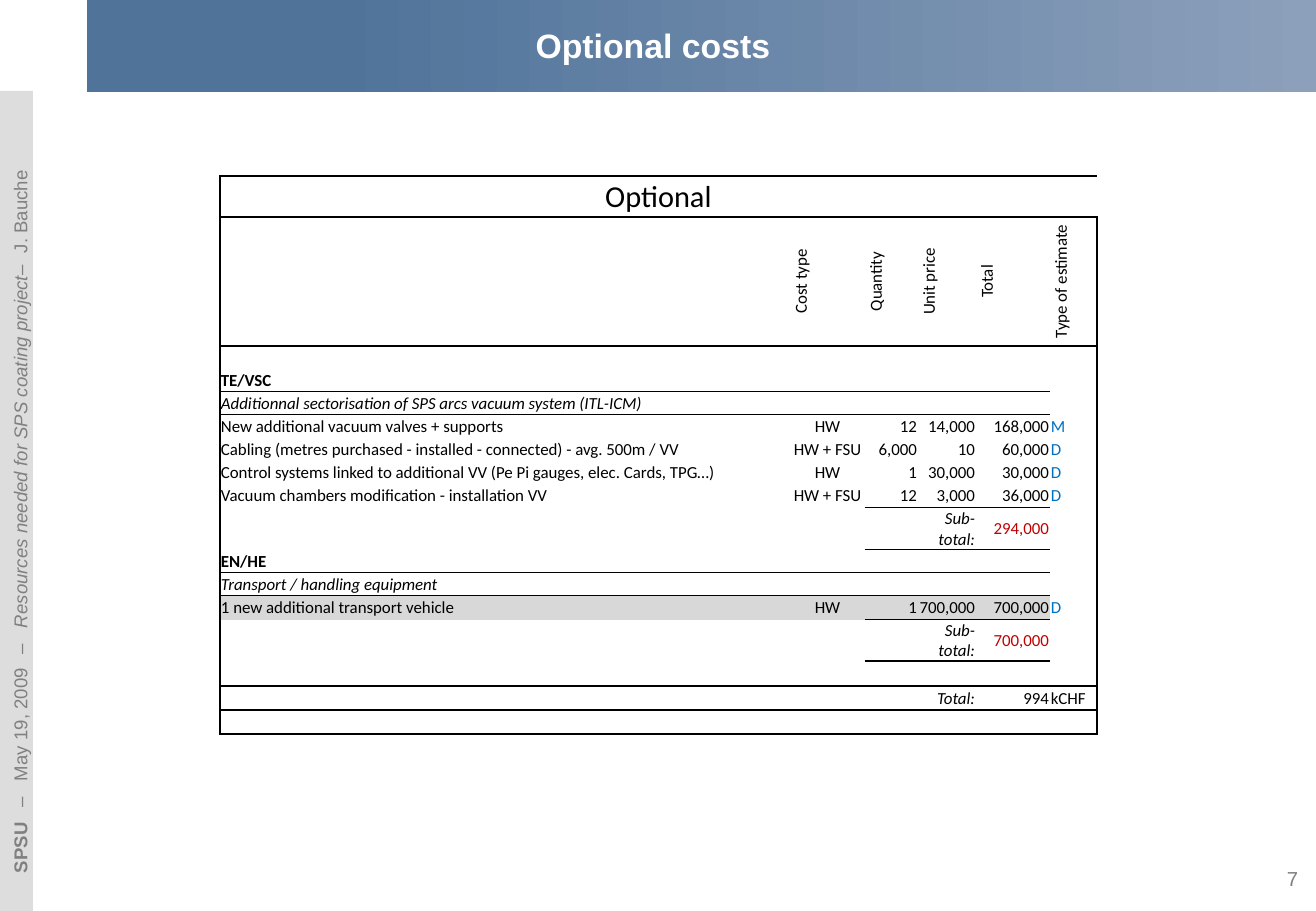
from lxml.etree import SubElement
from pptx import Presentation
from pptx.dml.color import RGBColor
from pptx.enum.shapes import MSO_SHAPE as Shape
from pptx.enum.text import MSO_ANCHOR as Anchor, PP_ALIGN as Align
from pptx.oxml.ns import qn

PX = 7526  # EMU in one px
rgb = RGBColor.from_string
BLACK, GREY, BLUE, RED = "000000", "808080", "0070C0", "C00000"

deck = Presentation()
deck.slide_width, deck.slide_height = 1316 * PX, 911 * PX
slide = deck.slides.add_slide(deck.slide_layouts[6])
shapes = slide.shapes


def label(x, y, w, h, size, color, align, inset=12):
    """Add a one-line text box and return it with its paragraph."""
    box = shapes.add_textbox(x * PX, y * PX, w * PX, h * PX)
    frame = box.text_frame
    frame.word_wrap = True
    frame.vertical_anchor = Anchor.MIDDLE
    frame.margin_left, frame.margin_right = inset * PX, 12 * PX
    para = frame.paragraphs[0]
    para.alignment = align
    font = para.font
    font.name, font.size = "Arial", size * 12700
    font.color.rgb = rgb(color)
    return box, para


def edge(cell, side, width):
    """Draw one border of a cell, width in points."""
    line = SubElement(cell._tc.get_or_add_tcPr(), qn("a:ln" + side), w=str(int(width * 12700)))
    fill = SubElement(line, qn("a:solidFill"))
    SubElement(fill, qn("a:srgbClr"), val=BLACK)


# Side strip and title band
strip = shapes.add_shape(Shape.RECTANGLE, 0, 91 * PX, 33 * PX, 820 * PX)
strip.fill.solid()
strip.fill.fore_color.rgb = rgb("DDDDDD")
band = shapes.add_shape(Shape.RECTANGLE, 87 * PX, 0, 1229 * PX, 92 * PX)
band.fill.gradient()
band.fill.gradient_angle = 0
for stop, place, color in zip(band.fill.gradient_stops, (0.2, 1), ("50739A", "8CA0BB")):
    stop.position, stop.color.rgb = place, rgb(color)
for shape in (strip, band):
    shape.shadow.inherit = False
    shape.line.fill.background()

# Side text, spaced with tab stops
side, para = label(-390, 481, 820, 40, 11, GREY, Align.LEFT, 38)
side.rotation = 270
props = para._p.get_or_add_pPr()
tabs = SubElement(props, qn("a:tabLst"))
props.insert(0, tabs)
for stop in (66, 92, 219, 245, 620):
    SubElement(tabs, qn("a:tab"), pos=str(stop * PX), algn="l")
for words, bold, italic in (
    ("SPSU", True, False),
    ("\t–\tMay 19, 2009\t–\t", False, False),
    ("Resources needed for SPS coating project", False, True),
    ("–\tJ. Bauche", False, False),
):
    run = para.add_run()
    run.text = words
    run.font.bold, run.font.italic = bold, italic

# Title and page number
title, para = label(152, 0, 1002, 91, 20, "FFFFFF", Align.CENTER)
para.text, para.font.bold = "Optional costs", True
page, para = label(1163, 861, 147, 35, 12, GREY, Align.RIGHT)
para.text = "7"

# Cost table
COLS = (570, 75, 53, 58, 74, 47)
ROWS = (41, 129, 23, 23, 23, 23, 23, 23, 24, 42, 23, 23, 24, 41, 25, 24, 24)
EMPTY = ("",) * 6
SECTIONS, NOTES, SUBS, TOTAL, SHADED = (3, 10), (4, 11), (9, 13), 15, 12
DATA = (
    ("Optional", "", "", "", "", ""),
    ("", "Cost type", "Quantity", "Unit price", "Total", "Type of estimate"),
    EMPTY,
    ("TE/VSC", "", "", "", "", ""),
    ("Additionnal sectorisation of SPS arcs vacuum system (ITL-ICM)", "", "", "", "", ""),
    ("New additional vacuum valves + supports", "HW", "12", "14,000", "168,000", "M"),
    ("Cabling (metres purchased - installed - connected) - avg. 500m / VV",
     "HW + FSU", "6,000", "10", "60,000", "D"),
    ("Control systems linked to additional VV (Pe Pi gauges, elec. Cards, TPG…)",
     "HW", "1", "30,000", "30,000", "D"),
    ("Vacuum chambers modification - installation VV", "HW + FSU", "12", "3,000", "36,000", "D"),
    ("", "", "", "Sub-total:", "294,000", ""),
    ("EN/HE", "", "", "", "", ""),
    ("Transport / handling equipment", "", "", "", "", ""),
    ("1 new additional transport vehicle", "HW", "1", "700,000", "700,000", "D"),
    ("", "", "", "Sub-total:", "700,000", ""),
    EMPTY,
    ("", "", "", "Total:", "994", "kCHF"),
    EMPTY,
)
# Rules under a row: first column, end column, points
RULES = {0: (0, 6, 1), 3: (0, 5, 0.5), 8: (2, 5, 1), 10: (0, 5, 0.5),
         12: (2, 5, 1), 14: (0, 6, 1), 15: (3, 6, 1), 16: (0, 6, 1)}
ALIGN = (Align.LEFT, Align.CENTER, Align.RIGHT, Align.RIGHT, Align.RIGHT, Align.LEFT)

frame = shapes.add_table(len(ROWS), len(COLS), 220 * PX, 176 * PX, sum(COLS) * PX, sum(ROWS) * PX)
table = frame.table
table.first_row = table.horz_banding = False
style = table._tbl.tblPr.find(qn("a:tableStyleId"))
style.text = "{2D5ABB26-0587-4C30-8999-92F81FD0307C}"  # no style, no grid
for col, width in zip(table.columns, COLS):
    col.width = width * PX
for row, height in zip(table.rows, ROWS):
    row.height = height * PX
table.cell(0, 0).merge(table.cell(0, 5))

for r, texts in enumerate(DATA):
    for c, words in enumerate(texts):
        cell = table.cell(r, c)
        cell.vertical_anchor = Anchor.MIDDLE
        cell.margin_left = cell.margin_right = cell.margin_top = PX
        cell.margin_bottom = 0

        # Borders go in the order left, right, top, bottom, then fill
        if c == 0:
            edge(cell, "L", 1)
        if c == 5:
            edge(cell, "R", 1)
        for side, rule in (("T", RULES.get(r - 1)), ("B", RULES.get(r))):
            if rule and rule[0] <= c < rule[1]:
                edge(cell, side, rule[2])
            elif r == 0 and side == "T":
                edge(cell, side, 1)
        if r == SHADED and c < 5:
            cell.fill.solid()
            cell.fill.fore_color.rgb = rgb("D8D8D8")
        else:
            cell.fill.background()
        if r == 1 and words:
            cell._tc.get_or_add_tcPr().set("vert", "vert270")

        # Text
        para = cell.text_frame.paragraphs[0]
        if not words:
            para._p.get_or_add_endParaRPr().set("sz", "1000")
            continue
        para.text = words
        para.alignment = Align.CENTER if r < 2 else ALIGN[c]
        font = para.font
        font.name, font.size = "Calibri", (18 if r == 0 else 10) * 12700
        font.bold = r in SECTIONS
        font.italic = r in NOTES or (c == 3 and r in SUBS + (TOTAL,))
        color = RED if c == 4 and r in SUBS else BLUE if words in ("M", "D") else BLACK
        font.color.rgb = rgb(color)

deck.save("out.pptx")
